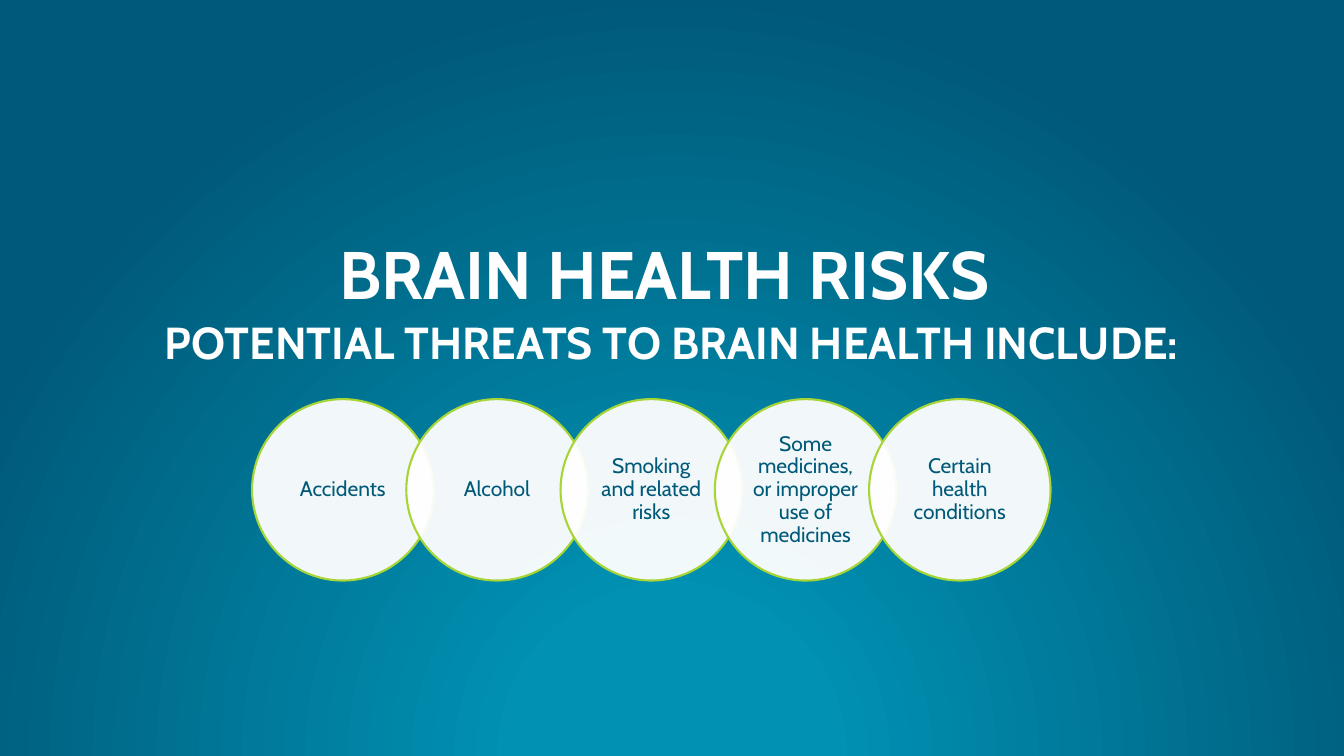
import pptx
import pptx.util
import pptx.oxml
import pptx.oxml.ns
from pptx.dml.color import RGBColor
from pptx.enum.shapes import MSO_SHAPE
from pptx.enum.text import MSO_ANCHOR, PP_ALIGN

TITLE = "BRAIN HEALTH RISKS "
SUBTITLE = "POTENTIAL THREATS TO BRAIN HEALTH INCLUDE:"
RISKS = [
    "Accidents",
    "Alcohol",
    "Smoking and related risks",
    "Some medicines, or improper use of medicines",
    "Certain health conditions",
]

FONT = "Cabin"
WHITE = RGBColor(0xFF, 0xFF, 0xFF)
GREEN = RGBColor(0xA7, 0xD5, 0x35)
NAVY = RGBColor(0x00, 0x59, 0x78)
TEAL = RGBColor(0x00, 0x91, 0xB3)
GRADIENT = [(0, TEAL), (20, TEAL), (100, NAVY)]

WIDTH, HEIGHT = 13.33, 7.5
CIRCLE = 1.8
STEP = 0.85 * CIRCLE
ROW_LEFT, ROW_TOP = 2.5, 3.96
OPACITY = 95

inch = pptx.util.Inches
pt = pptx.util.Pt
qn = pptx.oxml.ns.qn


def set_background(s):
    s.background.fill.gradient()
    old = s.background._cSld.find(".//" + qn("a:gradFill"))
    stops = "".join(
        f'<a:gs pos="{pos * 1000}"><a:srgbClr val="{color}"/></a:gs>'
        for pos, color in GRADIENT
    )
    grad = pptx.oxml.parse_xml(
        f'<a:gradFill {pptx.oxml.ns.nsdecls("a")} rotWithShape="1">'
        f"<a:gsLst>{stops}</a:gsLst>"
        '<a:path path="circle">'
        '<a:fillToRect l="50000" t="130000" r="50000" b="-30000"/>'
        "</a:path></a:gradFill>"
    )
    old.getparent().replace(old, grad)


def write(sp, text, size, color, spacing, anchor, bold=False):
    tf = sp.text_frame
    tf.word_wrap = True
    tf.vertical_anchor = anchor
    p = tf.paragraphs[0]
    p.text = text
    p.alignment = PP_ALIGN.CENTER
    p.line_spacing = spacing
    p.font.name = FONT
    p.font.size = pt(size)
    p.font.bold = bold
    p.font.color.rgb = color
    return tf


def add_heading(s, text, top, height, size, spacing, anchor):
    sp = s.shapes.add_textbox(0, inch(top), inch(WIDTH), inch(height))
    write(sp, text, size, WHITE, spacing, anchor, bold=True)


def add_circle(s, text, left):
    sp = s.shapes.add_shape(
        MSO_SHAPE.OVAL, inch(left), inch(ROW_TOP), inch(CIRCLE), inch(CIRCLE)
    )
    sp.shadow.inherit = False
    sp.fill.solid()
    sp.fill.fore_color.rgb = WHITE
    color = sp._element.spPr.find(qn("a:solidFill")).find(qn("a:srgbClr"))
    alpha = pptx.oxml.parse_xml(
        f'<a:alpha {pptx.oxml.ns.nsdecls("a")} val="{OPACITY * 1000}"/>'
    )
    color.append(alpha)
    sp.line.color.rgb = GREEN
    sp.line.width = pt(1.5)
    tf = write(sp, text, 15, NAVY, 0.9, MSO_ANCHOR.MIDDLE)
    tf.margin_left = tf.margin_right = inch(0.1)
    tf.margin_top = tf.margin_bottom = inch(0.02)


def main():
    prs = pptx.Presentation()
    prs.slide_width = inch(WIDTH)
    prs.slide_height = inch(HEIGHT)
    s = prs.slides.add_slide(prs.slide_layouts[6])
    set_background(s)
    add_heading(s, TITLE, 2.38, 0.78, 48, 0.9, MSO_ANCHOR.BOTTOM)
    add_heading(s, SUBTITLE, 3.22, 0.85, 32, pt(27.8), MSO_ANCHOR.TOP)
    for i, risk in enumerate(RISKS):
        add_circle(s, risk, ROW_LEFT + i * STEP)
    prs.save("out.pptx")


if __name__ == "__main__":
    main()
